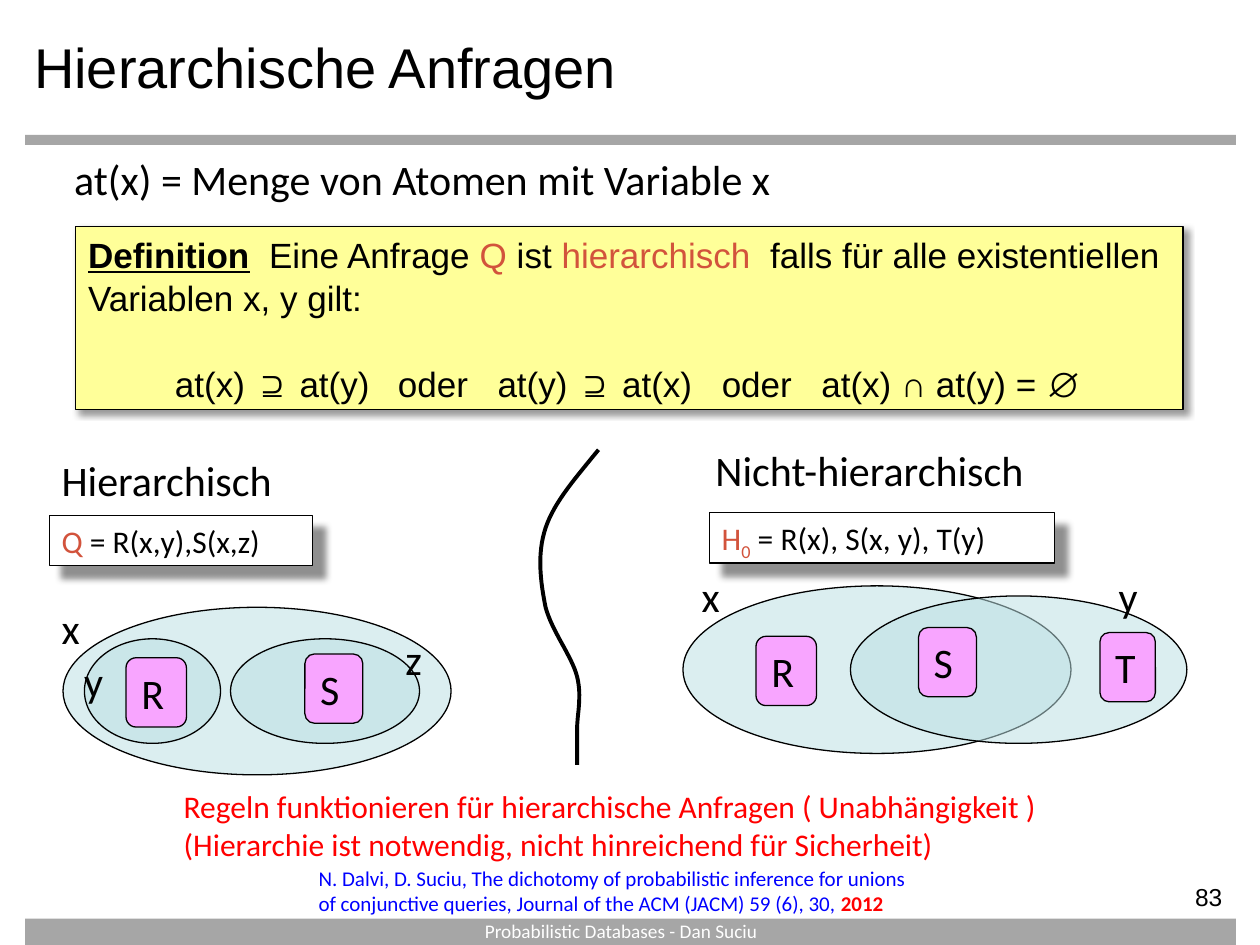
from lxml import etree
from pptx import Presentation
from pptx.dml.color import RGBColor
from pptx.enum.shapes import MSO_SHAPE as SHAPE
from pptx.enum.text import MSO_ANCHOR as ANCHOR, PP_ALIGN as ALIGN
from pptx.oxml.ns import qn
from pptx.util import Inches, Pt

BLACK = RGBColor(0x00, 0x00, 0x00)
WHITE = RGBColor(0xFF, 0xFF, 0xFF)
GRAY = RGBColor(0xA6, 0xA6, 0xA6)
YELLOW = RGBColor(0xFF, 0xFF, 0x99)
PINK = RGBColor(0xF8, 0xA5, 0xFF)
TEAL = RGBColor(0xBB, 0xE0, 0xE3)
ACCENT = RGBColor(0xD2, 0x53, 0x3C)
RED = RGBColor(0xFF, 0x00, 0x00)
BLUE = RGBColor(0x00, 0x00, 0xFF)

LABEL = dict(name="Calibri", size=Pt(24), color=BLACK)
QUERY = dict(LABEL, size=Pt(18))
DEFINITION = dict(name="Arial", size=Pt(20), color=BLACK)
RULES = dict(LABEL, size=Pt(18), color=RED)
CITATION = dict(LABEL, size=Pt(12), color=BLUE)
FOOTER = dict(LABEL, size=Pt(11), color=WHITE)
NUMBER = dict(name="Arial", size=Pt(14), color=BLACK)
TITLE = dict(name="Arial", size=Pt(32), color=BLACK)

ATOM_HEIGHT = 0.55


def add_run(p, text, style):
    r = p.add_run()
    r.text = text
    for key, value in style.items():
        if key == "color":
            r.font.color.rgb = value
        elif key == "baseline":
            r.font._element.set("baseline", str(value))
        else:
            setattr(r.font, key, value)


def write(sp, paragraphs, style, anchor=ANCHOR.TOP, align=ALIGN.LEFT):
    tf = sp.text_frame
    tf.word_wrap = True
    tf.vertical_anchor = anchor
    for i, runs in enumerate(paragraphs):
        p = tf.add_paragraph() if i else tf.paragraphs[0]
        p.alignment = align
        for text, changes in runs:
            add_run(p, text, {**style, **changes})


def add_text(s, box, paragraphs, style, **layout):
    sp = s.shapes.add_textbox(*map(Inches, box))
    write(sp, paragraphs, style, **layout)
    return sp


def add_label(s, text, *box):
    add_text(s, box, [[(text, {})]], LABEL, anchor=ANCHOR.MIDDLE)


def add_shape(s, kind, box, fill, outlined=True):
    sp = s.shapes.add_shape(kind, *map(Inches, box))
    sp.shadow.inherit = False
    sp.fill.solid()
    sp.fill.fore_color.rgb = fill
    if outlined:
        sp.line.color.rgb = BLACK
        sp.line.width = Pt(0.75)
    else:
        sp.line.fill.background()
    return sp


def add_set(s, *box):
    sp = add_shape(s, SHAPE.OVAL, box, TEAL)
    color = sp._element.spPr.find(qn("a:solidFill"))[0]
    etree.SubElement(color, qn("a:alpha"), val="53000")


def add_atom(s, name, left, top, width):
    sp = add_shape(s, SHAPE.ROUNDED_RECTANGLE, (left, top, width, ATOM_HEIGHT), PINK)
    write(sp, [[(name, {})]], LABEL, anchor=ANCHOR.MIDDLE)


def add_shadow_box(s, box, fill, distance, opacity, paragraphs, style):
    sp = add_shape(s, SHAPE.RECTANGLE, box, fill)
    effects = sp._element.spPr.find(qn("a:effectLst"))
    shadow = etree.SubElement(effects, qn("a:outerShdw"), blurRad=str(Pt(4)),
                              dist=str(Pt(distance)), dir="2700000", rotWithShape="0")
    color = etree.SubElement(shadow, qn("a:srgbClr"), val=str(BLACK))
    etree.SubElement(color, qn("a:alpha"), val=str(opacity * 1000))
    write(sp, paragraphs, style)
    return sp


def add_definition(s):
    accent = dict(color=ACCENT)
    formula = "\tat(x) ⊇ at(y)\toder\tat(y) ⊇ at(x)\toder\tat(x) ∩ at(y) = ∅"
    sp = add_shadow_box(s, (0.6, 1.8, 8.79, 1.45), YELLOW, 3, 40, [
        [("Definition", dict(bold=True, underline=True)), ("  Eine Anfrage ", {}),
         ("Q ", accent), ("ist ", {}), ("hierarchisch  ", accent),
         ("falls für alle existentiellen", {})],
        [("Variablen x, y gilt:", {})],
        [(formula, {})],
    ], DEFINITION)
    _, second, last = sp.text_frame.paragraphs
    second.space_before = Pt(1)
    last.space_before = Pt(25)
    tabs = etree.Element(qn("a:tabLst"))
    for stop in (0.69, 2.46, 3.25, 5.03, 5.82):
        etree.SubElement(tabs, qn("a:tab"), pos=str(Inches(stop)), algn="l")
    last._p.get_or_add_pPr().append(tabs)


def add_divider(s, start, curves, steps=16):
    points = []
    for c1, c2, end in curves:
        for t in (i / steps for i in range(1, steps + 1)):
            u = 1 - t
            points.append([Inches(u**3 * a + 3 * u * u * t * b + 3 * u * t * t * c + t**3 * d)
                           for a, b, c, d in zip(start, c1, c2, end)])
        start = end
    x, y = curves[0][0][0] + 0.17, curves[0][0][1] - 0.21
    builder = s.shapes.build_freeform(Inches(x), Inches(y))
    builder.add_line_segments(points, close=False)
    sp = builder.convert_to_shape()
    sp.shadow.inherit = False
    sp.fill.background()
    sp.line.color.rgb = BLACK
    sp.line.width = Pt(2.25)


def add_hierarchical(s):
    add_label(s, "Hierarchisch", 0.39, 3.56, 1.94, 0.5)
    add_shadow_box(s, (0.39, 4.09, 2.09, 0.4), WHITE, 10, 43,
                   [[("Q", dict(color=ACCENT)), (" = R(x,y),S(x,z)", {})]], QUERY)
    add_set(s, 0.5, 4.82, 3.08, 1.33)
    add_set(s, 0.67, 5.07, 1.08, 0.83)
    add_atom(s, "R", 1, 5.22, 0.48)
    add_set(s, 1.83, 5.07, 1.5, 0.83)
    add_atom(s, "S", 2.42, 5.19, 0.46)
    for name, left, top in (("x", 0.39, 4.73), ("y", 0.57, 5.15), ("z", 3.12, 4.98)):
        add_label(s, name, left, top, 0.37, 0.5)


def add_non_hierarchical(s):
    add_label(s, "Nicht-hierarchisch", 5.58, 3.48, 2.75, 0.5)
    add_shadow_box(s, (5.63, 4.07, 2.74, 0.4), WHITE, 10, 43,
                   [[("H", dict(color=ACCENT)), ("0", dict(color=ACCENT, baseline=-25000)),
                     (" = R(x), S(x, y), T(y)", {})]], QUERY)
    add_set(s, 5.42, 4.65, 3.08, 1.33)
    add_atom(s, "R", 6, 5.05, 0.48)
    add_set(s, 6.75, 4.73, 2.67, 1.17)
    add_atom(s, "S", 7.29, 4.98, 0.46)
    add_atom(s, "T", 8.73, 5.02, 0.44)
    for name, left in (("x", 5.47), ("y", 8.78)):
        add_label(s, name, left, 4.48, 0.37, 0.5)


def add_frame(s):
    for top, height in ((1.07, 0.08), (7.29, 0.21)):
        add_shape(s, SHAPE.RECTANGLE, (0.2, top, 9.61, height), GRAY, outlined=False)
    title = s.shapes.title
    place = dict(left=0.17, top=0.21, width=9.5, height=1.25)
    for key, value in place.items():
        setattr(title, key, Inches(value))
    write(title, [[("Hierarchische Anfragen", {})]], TITLE)
    number = add_text(s, (8.7, 7, 1.1, 0.22), [[("83", {})]], NUMBER, align=ALIGN.RIGHT)
    for side in ("left", "top", "bottom"):
        setattr(number.text_frame, f"margin_{side}", 0)
    add_text(s, (3.49, 7.25, 2.88, 0.24), [[("Probabilistic Databases - Dan Suciu", {})]],
             FOOTER, align=ALIGN.CENTER)


def main():
    prs = Presentation()
    prs.slide_width, prs.slide_height = Inches(10), Inches(7.5)
    s = prs.slides.add_slide(prs.slide_layouts[5])
    add_frame(s)
    add_label(s, "at(x) = Menge von Atomen mit Variable x", 0.49, 1.17, 5.92, 0.5)
    add_non_hierarchical(s)
    add_hierarchical(s)
    add_divider(s, (4.75, 3.57), [
        ((4.58, 3.78), (4.4, 3.98), (4.33, 4.19)),
        ((4.26, 4.4), (4.29, 4.62), (4.33, 4.82)),
        ((4.38, 5.01), (4.54, 5.21), (4.58, 5.37)),
        ((4.62, 5.53), (4.58, 5.67), (4.58, 5.79)),
        ((4.58, 5.91), (4.58, 5.99), (4.58, 6.07)),
    ])
    add_definition(s)
    add_text(s, (1.36, 6.19, 7.26, 0.71), [
        [("Regeln funktionieren für hierarchische Anfragen ( Unabhängigkeit )", {})],
        [("(Hierarchie ist notwendig, nicht hinreichend für Sicherheit)", {})],
    ], RULES, anchor=ANCHOR.MIDDLE)
    add_text(s, (2.43, 6.82, 5, 0.5), [[
        ("N. Dalvi, D. Suciu, The dichotomy of probabilistic inference for unions of "
         "conjunctive queries, Journal of the ACM (JACM) 59 (6), 30, ", {}),
        ("2012", dict(color=RED, bold=True)),
    ]], CITATION)
    prs.save("out.pptx")


if __name__ == "__main__":
    main()
